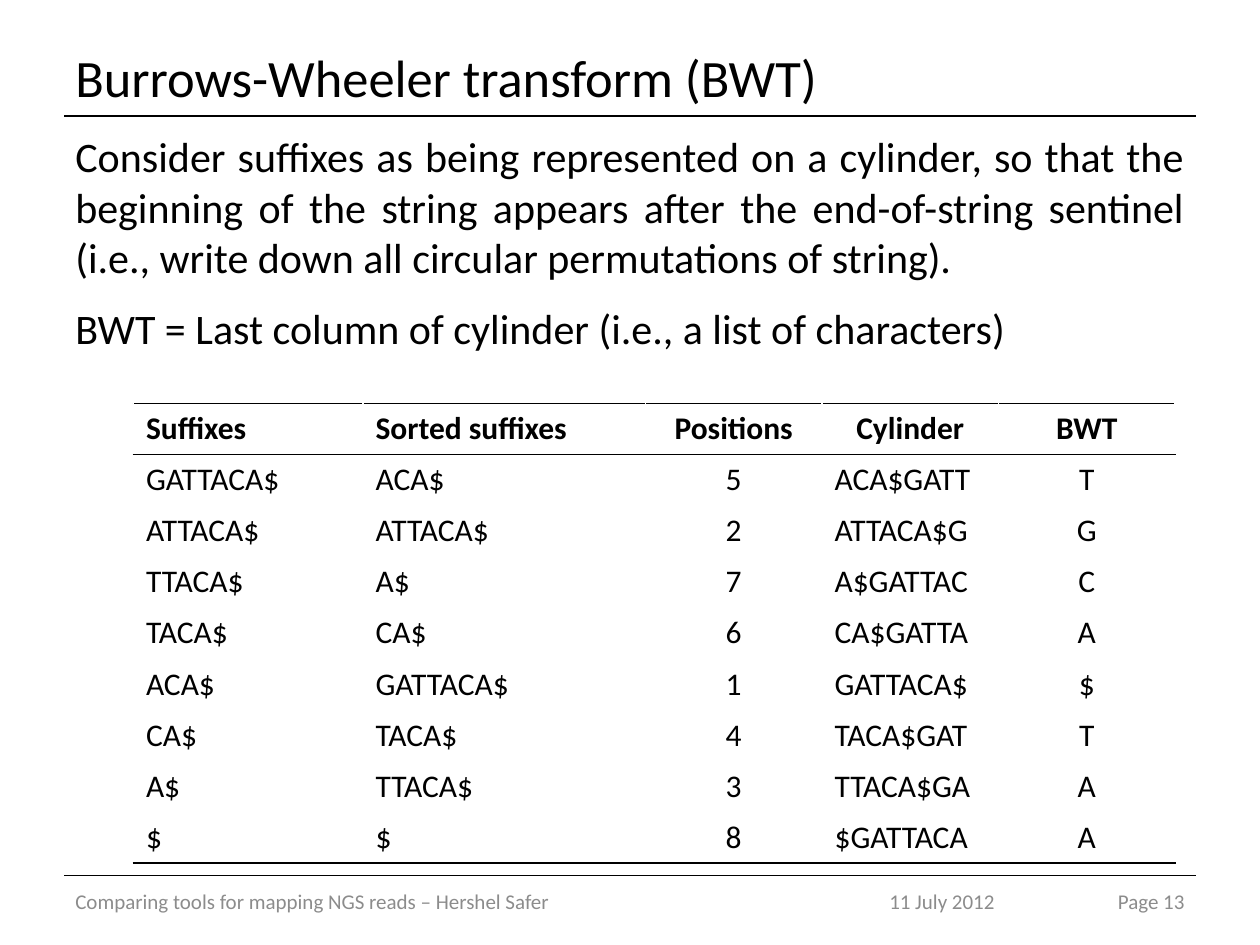
import pptx
import pptx.dml.color
import pptx.enum.shapes
import pptx.enum.text
import pptx.oxml
import pptx.oxml.ns
import pptx.util

Cm = pptx.util.Cm
Pt = pptx.util.Pt
ALIGN = pptx.enum.text.PP_ALIGN
ANCHOR = pptx.enum.text.MSO_ANCHOR

FONT = "Calibri"
COLORS = {"text": "000000", "rule": "000000", "footer": "8C8C8C", "paper": "FFFFFF"}
SLIDE_W, SLIDE_H = 25.4, 19.05
MARGIN = 1.27
CONTENT_W = SLIDE_W - 2 * MARGIN
WORD = "GATTACA$"


def rgb(name):
    return pptx.dml.color.RGBColor.from_string(COLORS[name])


def style(p, size, color="text", align=ALIGN.LEFT, bold=False):
    p.alignment = align
    p.font.name = FONT
    p.font.size = Pt(size)
    p.font.bold = bold
    p.font.color.rgb = rgb(color)


def add_text(slide, box, paragraphs, size, color="text", align=ALIGN.LEFT,
             anchor=ANCHOR.MIDDLE, space_after=0):
    tf = slide.shapes.add_textbox(*map(Cm, box)).text_frame
    tf.word_wrap = True
    tf.vertical_anchor = anchor
    for i, text in enumerate(paragraphs):
        p = tf.add_paragraph() if i else tf.paragraphs[0]
        p.text = text
        p.space_after = Pt(space_after)
        style(p, size, color, align)


def add_rule(slide, left, top, width):
    line = slide.shapes.add_connector(
        pptx.enum.shapes.MSO_CONNECTOR.STRAIGHT,
        Cm(left), Cm(top), Cm(left + width), Cm(top))
    line.line.color.rgb = rgb("rule")
    line.line.width = Pt(0.75)
    pptx.oxml.ns.qn("a:effectLst")
    line._element.spPr.append(pptx.oxml.parse_xml(
        f"<a:effectLst {pptx.oxml.ns.nsdecls('a')}/>"))


def set_borders(cell, top, bottom):
    """Draw 1 pt borders; fill must be set afterwards so it follows them."""
    sides = {"L": "paper", "R": "paper", "T": top, "B": bottom}
    for side, color in sides.items():
        cell._tc.get_or_add_tcPr().append(pptx.oxml.parse_xml(
            f'<a:ln{side} {pptx.oxml.ns.nsdecls("a")} w="{Pt(1)}"><a:solidFill>'
            f'<a:srgbClr val="{COLORS[color]}"/></a:solidFill></a:ln{side}>'))


def add_header(slide, left, top, width, height):
    add_text(slide, (left, top, width, height),
             ["Burrows-Wheeler transform (BWT)"], 30)
    add_rule(slide, left + 0.03, top + height + 0.03, width - 0.06)


def add_body(slide, left, top, width, height):
    add_text(slide, (left, top, width, height), [
        "Consider suffixes as being represented on a cylinder, so that the "
        "beginning of the string appears after the end-of-string sentinel "
        "(i.e., write down all circular permutations of string).",
        "BWT = Last column of cylinder (i.e., a list of characters)",
    ], 24, align=ALIGN.JUSTIFY, anchor=ANCHOR.TOP, space_after=12)


def add_footer(slide, left, top, width, height):
    add_rule(slide, left + 0.03, top, width - 0.06)
    parts = [
        (0, 15.24, "Comparing tools for mapping NGS reads – Hershel Safer", ALIGN.LEFT),
        (15.42, 4.6, "11 July 2012", ALIGN.CENTER),
        (width - 2.64, 2.64, "Page 13", ALIGN.RIGHT),
    ]
    for offset, part_w, text, align in parts:
        add_text(slide, (left + offset, top, part_w, height), [text], 12,
                 "footer", align)


def bwt_rows(word):
    """Suffixes, sorted suffixes, positions, rotations and last letters.

    The sentinel sorts after all letters.
    """
    starts = range(len(word))
    order = sorted(starts, key=lambda i: word[i:].replace("$", "~"))
    rows = [["Suffixes", "Sorted suffixes", "Positions", "Cylinder", "BWT"]]
    for start, pos in zip(starts, order):
        rotation = word[pos:] + word[:pos]
        rows.append([word[start:], word[pos:], str(pos + 1), rotation, rotation[-1]])
    return rows


def add_bwt_table(slide, left, top, width, height):
    rows = bwt_rows(WORD)
    last = len(rows) - 1
    shares = [1.82, 2.24, 1.4, 1.4, 1.4]
    table = slide.shapes.add_table(
        len(rows), len(shares), Cm(left), Cm(top), Cm(width), Cm(height)).table
    table.horz_banding = False
    for column, share in zip(table.columns, shares):
        column.width = Cm(width * share / sum(shares))
    for row in table.rows:
        row.height = Cm(height / len(rows))

    for r, values in enumerate(rows):
        for c, text in enumerate(values):
            cell = table.cell(r, c)
            cell.text = text
            centred = c in (2, 4) or (c == 3 and r == 0)
            style(cell.text_frame.paragraphs[0], 18, bold=r == 0,
                  align=ALIGN.CENTER if centred else ALIGN.LEFT)
            set_borders(cell, "rule" if r < 2 else "paper",
                        "rule" if r in (0, last) else "paper")
            cell.fill.background()


def main():
    prs = pptx.Presentation()
    prs.slide_width, prs.slide_height = Cm(SLIDE_W), Cm(SLIDE_H)
    slide = prs.slides.add_slide(prs.slide_layouts[6])
    add_header(slide, MARGIN, 0.76, CONTENT_W, 1.55)
    add_body(slide, MARGIN, 2.51, CONTENT_W, 15.01)
    add_footer(slide, MARGIN, 17.65, CONTENT_W, 1.02)
    add_bwt_table(slide, 2.69, 8.13, 21, 9.27)
    prs.save("out.pptx")


if __name__ == "__main__":
    main()
